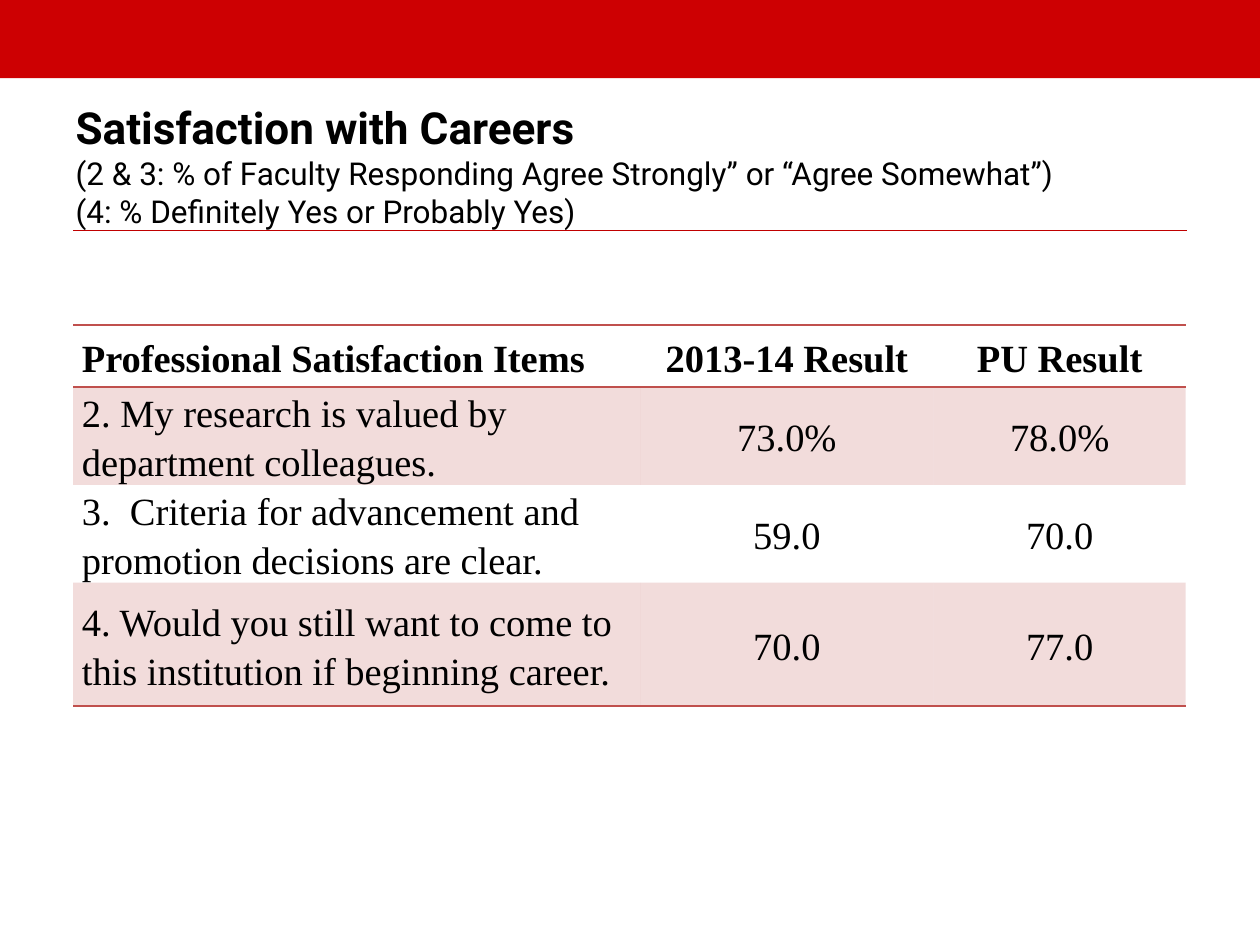
import pptx
import pptx.dml.color
import pptx.enum.shapes
import pptx.enum.text
import pptx.oxml
import pptx.oxml.ns
import pptx.util
from pptx.util import Inches


def color(value):
    return pptx.dml.color.RGBColor.from_string(value)


def add_border(cell, side, value):
    border = pptx.oxml.parse_xml(
        f'<a:{side} {pptx.oxml.ns.nsdecls("a")} w="12700"><a:solidFill>'
        f'<a:srgbClr val="{value}"/></a:solidFill></a:{side}>'
    )
    cell._tc.get_or_add_tcPr().insert(0, border)


presentation = pptx.Presentation()
presentation.slide_width = Inches(10)
presentation.slide_height = Inches(7.5)
slide = presentation.slides.add_slide(presentation.slide_layouts[5])

banner = slide.shapes.add_shape(
    pptx.enum.shapes.MSO_SHAPE.RECTANGLE, Inches(0), Inches(0), Inches(10), Inches(0.62)
)
banner.shadow.inherit = False
banner.fill.solid()
banner.fill.fore_color.rgb = color("CD0002")
banner.line.fill.background()

title = slide.shapes.title
title.left, title.top = Inches(0.5), Inches(0.87)
title.width, title.height = Inches(9.42), Inches(0.88)
title_frame = title.text_frame
title_frame.text = (
    "Satisfaction with Careers\v"
    "(2 & 3: % of Faculty Responding Agree Strongly” or “Agree Somewhat”)\v"
    "(4: % Definitely Yes or Probably Yes)"
)
title_frame.auto_size = pptx.enum.text.MSO_AUTO_SIZE.NONE
title_frame.word_wrap = True
title_frame.vertical_anchor = pptx.enum.text.MSO_ANCHOR.MIDDLE
title_paragraph = title_frame.paragraphs[0]
title_paragraph.alignment = pptx.enum.text.PP_ALIGN.LEFT
for index, run in enumerate(title_paragraph.runs):
    run.font.name = "Roboto"
    run.font.size = pptx.util.Pt(25.2 if index == 0 else 18)
    run.font.bold = index == 0
    run.font.color.rgb = color("000000")

title_rule = slide.shapes.add_connector(
    pptx.enum.shapes.MSO_CONNECTOR.STRAIGHT, Inches(0.58), Inches(1.83), Inches(9.42), Inches(1.83)
)
title_rule.line.color.rgb = color("C00000")
title_rule.line.width = pptx.util.Pt(0.75)
title_rule._element.spPr.append(
    pptx.oxml.parse_xml(f'<a:effectLst {pptx.oxml.ns.nsdecls("a")}/>')
)

rows = [
    ("Professional Satisfaction Items", "2013-14 Result", "PU Result"),
    ("2. My research is valued by department colleagues.", "73.0%", "78.0%"),
    ("3.  Criteria for advancement and promotion decisions are clear.", "59.0", "70.0"),
    ("4. Would you still want to come to this institution if beginning career.", "70.0", "77.0"),
]
column_widths = [4.5, 2.33, 2]
row_heights = [0.49, 0.76, 0.75, 0.98]
accent = "C0504D"

table = slide.shapes.add_table(
    len(rows), len(column_widths), Inches(0.58), Inches(2.58), Inches(8.83), Inches(2.98)
).table
table.horz_banding = False
table._tbl.tblPr.find(pptx.oxml.ns.qn("a:tableStyleId")).text = (
    "{2D5ABB26-0587-4C30-8999-92F81FD0307C}"
)
for column, width in zip(table.columns, column_widths):
    column.width = Inches(width)
for row, height in zip(table.rows, row_heights):
    row.height = Inches(height)

for row_index, texts in enumerate(rows):
    for column_index, text in enumerate(texts):
        cell = table.cell(row_index, column_index)
        cell.text = text
        cell.vertical_anchor = pptx.enum.text.MSO_ANCHOR.MIDDLE
        cell.margin_left = cell.margin_right = Inches(0.07)
        cell.margin_top = cell.margin_bottom = Inches(0)
        paragraph = cell.text_frame.paragraphs[0]
        paragraph.line_spacing = 1.15
        paragraph.alignment = (
            pptx.enum.text.PP_ALIGN.CENTER if column_index else pptx.enum.text.PP_ALIGN.LEFT
        )
        font = paragraph.runs[0].font
        font.name = "Times New Roman"
        font.size = pptx.util.Pt(22)
        font.bold = row_index == 0
        font.color.rgb = color("000000")

        if row_index % 2:
            cell.fill.solid()
            cell.fill.fore_color.rgb = color(accent)
            fill_color = cell._tc.tcPr.find(".//" + pptx.oxml.ns.qn("a:srgbClr"))
            fill_color.append(
                pptx.oxml.parse_xml(f'<a:alpha {pptx.oxml.ns.nsdecls("a")} val="20000"/>')
            )
        else:
            cell.fill.background()
        if row_index in (0, len(rows) - 1):
            add_border(cell, "lnB", accent)
        if row_index == 0:
            add_border(cell, "lnT", accent)

presentation.save("out.pptx")
